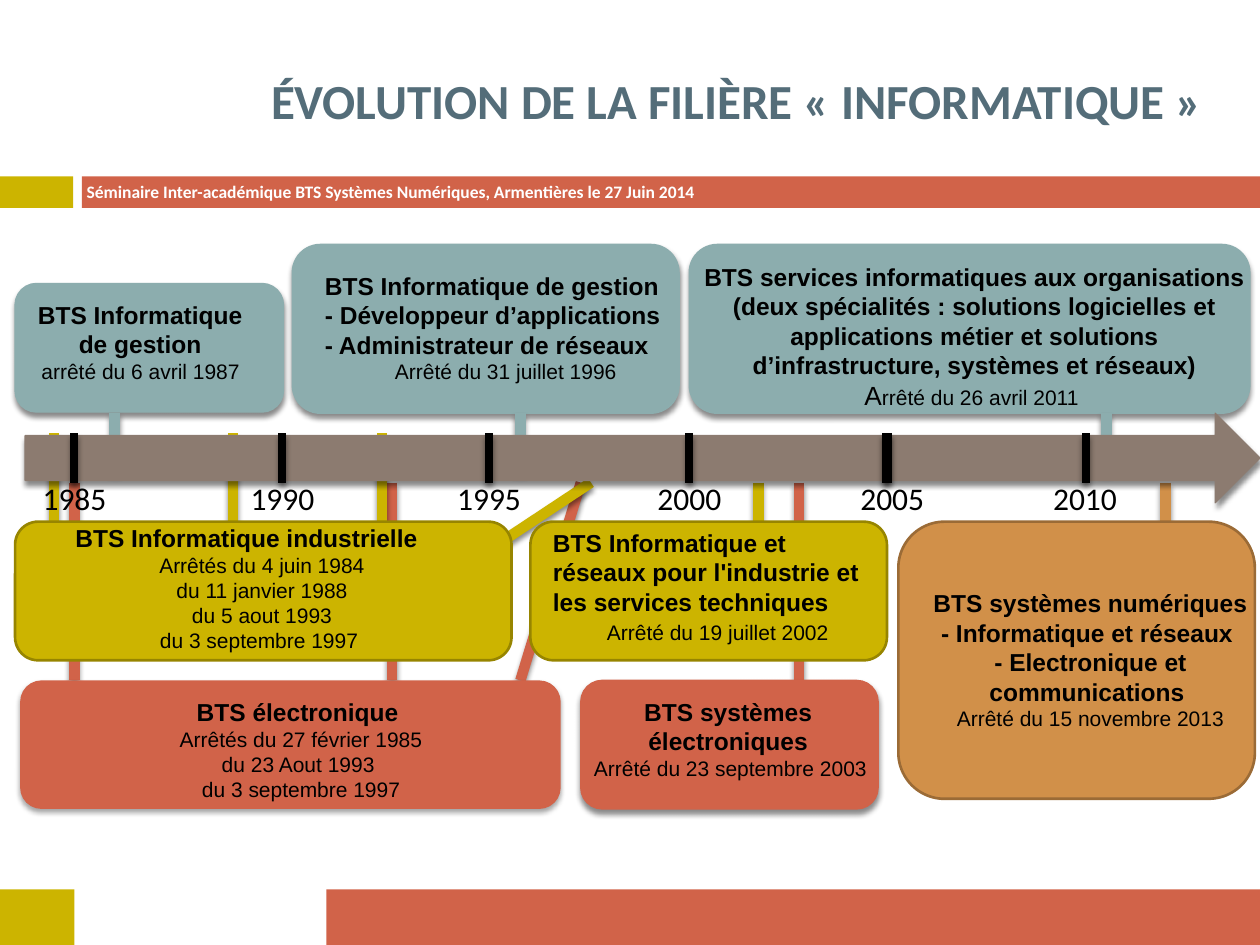
from lxml import etree
from pptx import Presentation
from pptx import util as u
from pptx.dml.color import RGBColor
from pptx.enum import shapes, text
from pptx.oxml.ns import qn

WIDTH, HEIGHT = u.Inches(10), u.Inches(7.5)
OLIVE, RED, TEAL, ORANGE, TAUPE = "CCB400", "D16349", "8CADAE", "D19049", "8C7B70"
LEFT, CENTER = text.PP_ALIGN.LEFT, text.PP_ALIGN.CENTER

# Rows of the timeline, in percent of the slide's height
CARD_END, SHAFT_TOP, LABELS, SHAFT_END = 43.73, 45.87, 50, 51.07
LOWER, STEM_END, BOTTOM = 55.2, 57.33, 72
SOFT, STRONG = (35, 2), (45, 2.4)  # shadow opacity in percent, distance in points


def rgb(value):
    return RGBColor.from_string(value)


def at(x, y, *size):
    """Turn percent of the slide (x, y, then x, y again) into lengths."""
    return [int(v * side / 100) for v, side in zip((x, y, *size), (WIDTH, HEIGHT) * 2)]


def set_all(obj, **values):
    for name, value in values.items():
        setattr(obj, name, value)


def add_shadow(sp, shadow):
    effects = etree.SubElement(sp._element.spPr, qn("a:effectLst"))
    if shadow:
        opacity, distance = shadow
        outer = etree.SubElement(effects, qn("a:outerShdw"), blurRad=str(u.Pt(3)),
                                 dist=str(u.Pt(distance)), dir="5400000", rotWithShape="0")
        color = etree.SubElement(outer, qn("a:srgbClr"), val="000000")
        etree.SubElement(color, qn("a:alpha"), val=str(opacity * 1000))


def add_block(parent, kind, box, fill, line=None, width=0.79, shadow=None):
    sp = parent.add_shape(kind, *at(*box))
    sp.fill.solid()
    sp.fill.fore_color.rgb = rgb(fill)
    if line:
        sp.line.color.rgb = rgb(line)
        sp.line.width = u.Pt(width)
    else:
        sp.line.fill.background()
    add_shadow(sp, shadow)


def add_bar(parent, x1, y1, x2, y2, color, width=6):
    bar = parent.add_connector(shapes.MSO_CONNECTOR.STRAIGHT, *at(x1, y1, x2, y2))
    bar.line.color.rgb = rgb(color)
    bar.line.width = u.Pt(width)
    add_shadow(bar, STRONG)


def write(tf, paragraphs, font="Arial", color="000000"):
    """Each paragraph is an alignment followed by (text, size, bold) runs."""
    for i, (align, *runs) in enumerate(paragraphs):
        p = tf.add_paragraph() if i else tf.paragraphs[0]
        p.alignment = align
        for content, size, bold in runs:
            r = p.add_run()
            r.text = content
            set_all(r.font, name=font, size=u.Pt(size), bold=bold)
            r.font.color.rgb = rgb(color)


def add_text(parent, box, paragraphs, wrap=True, **look):
    tf = parent.add_textbox(*at(*box)).text_frame
    set_all(tf, word_wrap=wrap, auto_size=text.MSO_AUTO_SIZE.SHAPE_TO_FIT_TEXT)
    write(tf, paragraphs, **look)


def head(content, align=CENTER):
    return align, (content, 14, True)


def decree(content):
    return CENTER, (content, 12, False)


def add_card(slide, fill, box, text_box, paragraphs, stems, line=None, width=0.79,
             shadow=STRONG, stems_first=True):
    """A diploma: rounded box, its text and the stems that tie it to the arrow."""
    group = slide.shapes.add_group_shape().shapes

    def add_stems():
        for stem in stems:
            add_bar(group, *stem, fill)

    if stems_first:
        add_stems()
    add_block(group, shapes.MSO_SHAPE.ROUNDED_RECTANGLE, box, fill, line, width, shadow)
    add_text(group, text_box, paragraphs)
    if not stems_first:
        add_stems()


def add_frame(slide):
    # Coloured bands, banner text and title
    for fill, *box in [(OLIVE, 0, 18.67, 5.8, 3.33), (RED, 6.5, 18.67, 93.5, 3.33),
                       (OLIVE, 0, 94.13, 5.9, 5.87), (RED, 25.9, 94.13, 74.1, 5.87)]:
        add_block(slide.shapes, shapes.MSO_SHAPE.RECTANGLE, box, fill)
    banner = "Séminaire Inter-académique BTS Systèmes Numériques, Armentières le 27 Juin 2014"
    add_text(slide.shapes, (5.9, 18.53, 60.6, 5.87), [(LEFT, (banner, 10, True))],
             font="Calibri", color="FFFFFF")
    title = slide.shapes.title
    left, top, width, height = at(16.9, 3.33, 83.1, 14.4)
    set_all(title, left=left, top=top, width=width, height=height)
    title.text_frame.vertical_anchor = text.MSO_ANCHOR.MIDDLE
    write(title.text_frame, [(CENTER, ("ÉVOLUTION DE LA FILIÈRE « INFORMATIQUE »", 28, True))],
          font="Calibri", color="546D79")


def add_electronics(slide):
    # Red cards in the bottom row, then the orange card that follows them
    add_card(slide, RED, (1.6, BOTTOM, 42.9, 13.6), (11.4, 73.07, 25, 12.53),
             [head("BTS électronique "), decree("Arrêtés du 27 février 1985"),
              decree("du 23 Aout 1993 "), decree("du 3 septembre 1997")],
             [(top, SHAFT_END, end, BOTTOM) for top, end in
              ((5.9, 5.9), (31.1, 31.1), (46.1, 41.3))], shadow=SOFT)
    add_card(slide, RED, (46.1, BOTTOM, 23.6, 13.6), (45.3, 73.07, 25, 10.27),
             [head("BTS systèmes électroniques"), decree(" Arrêté du 23 septembre 2003")],
             [(63.4, SHAFT_END, 63.4, BOTTOM)], line=RED)
    add_card(slide, ORANGE, (71.3, LOWER, 28.3, 29.33), (72, 61.6, 29.1, 16.67),
             [head("BTS systèmes numériques"), head("- Informatique et réseaux "),
              head("- Electronique et communications "), decree("Arrêté du 15 novembre 2013")],
             [(92.5, SHAFT_END, 92.5, STEM_END)], line="9B6B36", width=1.5, shadow=None)


def add_management(slide):
    # Teal cards above the arrow: box, text box, stem column, text
    cards = [
        ((1.2, 30, 21.3, 13.6), (0.4, 31.07, 22, 10.27), 9.1,
         [head("BTS Informatique "), head("de gestion "), decree("arrêté du 6 avril 1987 ")]),
        ((23.2, 25.87, 30.7, 17.87), (24.8, 28, 30.7, 13.87), 41.3,
         [head("BTS Informatique de gestion", LEFT), head("- Développeur d’applications", LEFT),
          head("- Administrateur de réseaux", LEFT), decree("Arrêté du 31 juillet 1996")]),
        ((54.7, 25.87, 44.5, 17.87), (54.7, 27.07, 45.3, 17.33), 87.8,
         [head("BTS services informatiques aux organisations (deux spécialités : solutions "
               "logicielles et applications métier et solutions d’infrastructure, systèmes "
               "et réseaux)"),
          (CENTER, ("A", 15, False), ("rrêté du 26 avril 2011 ", 12, False))]),
    ]
    for box, text_box, x, paragraphs in cards:
        add_card(slide, TEAL, box, text_box, paragraphs, [(x, CARD_END, x, LABELS)],
                 line=TEAL, stems_first=False)


def add_industry(slide):
    # Olive cards below the arrow
    look = dict(line="978500", width=1.5, shadow=None)
    add_card(slide, OLIVE, (1.2, LOWER, 39.4, 14.67), (5, 54.67, 31.6, 15.2),
             [head("BTS Informatique industrielle", LEFT), decree("Arrêtés du 4 juin 1984"),
              decree("du 11 janvier 1988"), decree("du 5 aout 1993"),
              decree("du 3 septembre 1997 ")],
             [(46.9, SHAFT_END, 39.8, STEM_END),
              *((x, SHAFT_TOP, x, LOWER) for x in (4.3, 18.5, 30.3))], **look)
    add_card(slide, OLIVE, (42.1, LOWER, 28.3, 14.67), (42.9, LOWER, 27.6, 13.87),
             [head("BTS Informatique et réseaux pour l'industrie et les services techniques", LEFT),
              (CENTER, (" ", 14, False), ("Arrêté du 19 juillet 2002", 12, False))],
             [(60.2, SHAFT_END, 60.2, STEM_END)], **look)


def add_timeline(slide):
    # Year labels, arrow and ticks
    group = slide.shapes.add_group_shape().shapes
    for i, x in enumerate((2.4, 18.9, 35.3, 51.2, 67.3, 82.6)):
        add_text(group, (x, LABELS, 7.6, 5.33), [(LEFT, (str(1985 + 5 * i), 18, False))],
                 wrap=False, font="Calibri")
    add_block(group, shapes.MSO_SHAPE.RIGHT_ARROW, (2, CARD_END, 98, 9.47), TAUPE,
              line=TAUPE, shadow=STRONG)
    for x in (5.9, 22.4, 38.8, 54.7, 70.5, 70.3, 86.2):
        add_bar(group, x, SHAFT_TOP, x, SHAFT_END, "000000", 4.5)


def main():
    prs = Presentation()
    set_all(prs, slide_width=WIDTH, slide_height=HEIGHT)
    slide = prs.slides.add_slide(prs.slide_layouts[5])
    for build in (add_frame, add_electronics, add_management, add_industry, add_timeline):
        build(slide)
    prs.save("out.pptx")


if __name__ == "__main__":
    main()
